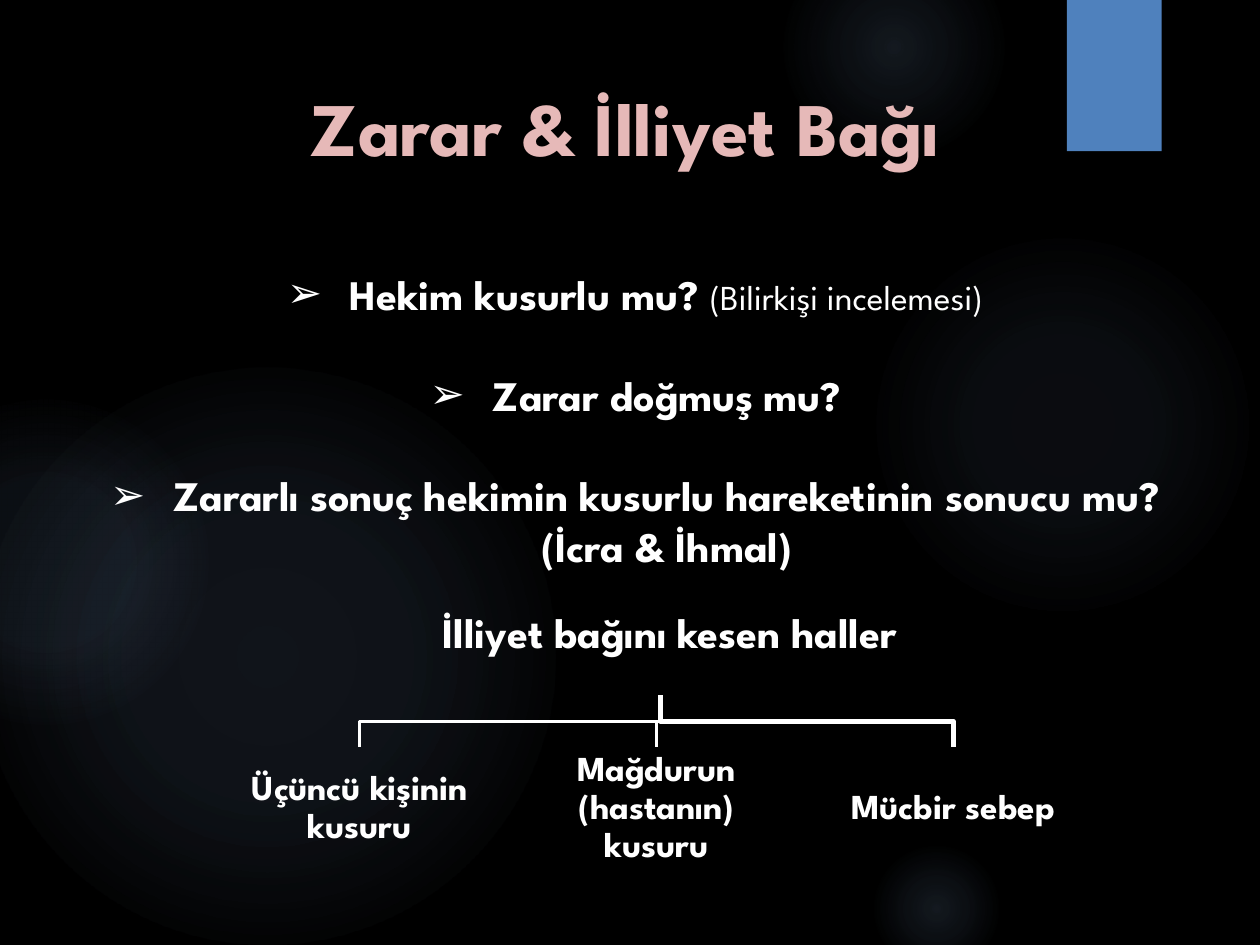
import dataclasses

import pptx
import pptx.dml.color
import pptx.enum.shapes
import pptx.enum.text
import pptx.oxml
import pptx.oxml.ns
import pptx.util
from lxml import etree

Cm = pptx.util.Cm
Pt = pptx.util.Pt
CENTER = pptx.enum.text.PP_ALIGN.CENTER
ANCHOR = pptx.enum.text.MSO_ANCHOR
SHAPE = pptx.enum.shapes.MSO_SHAPE


@dataclasses.dataclass(frozen=True)
class Theme:
    font: str = "League Spartan"
    background: str = "000000"
    text: str = "FFFFFF"
    title: str = "E6B9B8"
    ribbon: str = "4F81BD"
    glow: str = "8EB4E3"
    title_size: float = 43.2
    heading_size: float = 24
    detail_size: float = 20


THEME = Theme()

# left, top, diameter in cm; then (position, opacity) stops in percent
GLOWS = [
    (17.5, 4.65, 7.82, [(0, 7), (36, 6), (69, 0)]),
    (15.8, -1.27, 4.45, [(0, 14), (36, 7), (73, 0)]),
    (17.5, 16.94, 2.74, [(0, 14), (36, 7), (66, 0)]),
    (-0.43, 7.42, 11.63, [(0, 11), (36, 10), (75, 0)]),
    (-2.34, 8.05, 6.55, [(0, 8), (36, 8), (72, 0)]),
]

QUESTIONS = [
    [("Hekim kusurlu mu? ", THEME.heading_size, True),
     ("(Bilirkişi incelemesi)", THEME.detail_size, False)],
    [("Zarar doğmuş mu?", THEME.heading_size, True)],
    [("Zararlı sonuç hekimin kusurlu hareketinin sonucu mu? (İcra & İhmal)",
      THEME.heading_size, True)],
]

# text, connector width in points
CAUSES = [
    ("Üçüncü kişinin kusuru", 1.75),
    ("Mağdurun (hastanın) kusuru", 1.75),
    ("Mücbir sebep", 2.75),
]


def rgb(value):
    return pptx.dml.color.RGBColor.from_string(value)


def set_all(target, values):
    for attribute, value in values.items():
        setattr(target, attribute, value)


def place(shape, left, top, width, height):
    set_all(shape, {"left": Cm(left), "top": Cm(top),
                    "width": Cm(width), "height": Cm(height)})


def add_run(paragraph, text, size, color=THEME.text, bold=True):
    run = paragraph.add_run()
    run.text = text
    set_all(run.font, {"name": THEME.font, "size": Pt(size), "bold": bold})
    run.font.color.rgb = rgb(color)


def add_plain_shape(slide, kind, left, top, width, height):
    shape = slide.shapes.add_shape(kind, Cm(left), Cm(top), Cm(width), Cm(height))
    shape.shadow.inherit = False
    shape.line.fill.background()
    return shape


def add_glow(slide, left, top, diameter, stops):
    """Add a circle that fades out from its centre."""
    glow = add_plain_shape(slide, SHAPE.OVAL, left, top, diameter, diameter)
    glow.fill.background()
    stop_xml = "".join(
        f'<a:gs pos="{position * 1000}"><a:srgbClr val="{THEME.glow}">'
        f'<a:alpha val="{opacity * 1000}"/></a:srgbClr></a:gs>'
        for position, opacity in stops)
    gradient = pptx.oxml.parse_xml(
        f'<a:gradFill {pptx.oxml.ns.nsdecls("a")} rotWithShape="1">'
        f'<a:gsLst>{stop_xml}</a:gsLst><a:path path="circle">'
        '<a:fillToRect l="50000" t="50000" r="50000" b="50000"/></a:path></a:gradFill>')
    no_fill = glow.element.spPr.find(pptx.oxml.ns.qn("a:noFill"))
    no_fill.getparent().replace(no_fill, gradient)


def add_ribbon(slide):
    ribbon = add_plain_shape(slide, SHAPE.RECTANGLE, 21.51, 0, 1.91, 3.05)
    ribbon.fill.solid()
    ribbon.fill.fore_color.rgb = rgb(THEME.ribbon)


def bring_to_front(shape):
    shape.element.getparent().append(shape.element)


def fill_title(title):
    bring_to_front(title)
    place(title, 3.5, 1.5, 18.21, 4.24)
    set_all(title.text_frame, {"vertical_anchor": ANCHOR.TOP, "word_wrap": True,
                               "auto_size": pptx.enum.text.MSO_AUTO_SIZE.NONE})
    heading = title.text_frame.paragraphs[0]
    heading.alignment = CENTER
    add_run(heading, "Zarar & İlliyet Bağı", THEME.title_size, THEME.title)


def add_bullet(paragraph):
    properties = paragraph._p.get_or_add_pPr()
    set_indent = {"marL": Cm(1.27), "indent": -Cm(1.27)}
    for name, length in set_indent.items():
        properties.set(name, str(int(length)))
    for tag, key, value in (("a:buFont", "typeface", "Arial"),
                            ("a:buChar", "char", "➢")):
        etree.SubElement(properties, pptx.oxml.ns.qn(tag)).set(key, value)


def fill_questions(body):
    bring_to_front(body)
    place(body, 1.3, 5.28, 23.01, 8.81)
    frame = body.text_frame
    set_all(frame, {"vertical_anchor": ANCHOR.TOP, "word_wrap": True,
                    "auto_size": pptx.enum.text.MSO_AUTO_SIZE.NONE})
    for index, parts in enumerate(QUESTIONS):
        question = frame.add_paragraph() if index else frame.paragraphs[0]
        add_bullet(question)
        set_all(question, {"alignment": CENTER,
                           "space_before": Pt(28.8 if index else 0)})
        for text, size, bold in parts:
            add_run(question, text, size, bold=bold)


def add_label(group, text, size, left, top, width, height, left_inset=0.03):
    label = group.shapes.add_textbox(Cm(left), Cm(top), Cm(width), Cm(height))
    set_all(label.text_frame, {
        "word_wrap": True, "vertical_anchor": ANCHOR.MIDDLE,
        "margin_left": Cm(left_inset), "margin_right": Cm(0.03),
        "margin_top": Cm(0.03), "margin_bottom": Cm(0.03)})
    paragraph = label.text_frame.paragraphs[0]
    set_all(paragraph, {"alignment": CENTER, "line_spacing": 0.9})
    add_run(paragraph, text, size)


def add_branch(group, start_x, end_x, top, bottom, weight):
    middle = (top + bottom) / 2
    builder = group.shapes.build_freeform(Cm(start_x), Cm(top))
    builder.add_line_segments(
        [(Cm(start_x), Cm(middle)), (Cm(end_x), Cm(middle)), (Cm(end_x), Cm(bottom))],
        close=False)
    branch = builder.convert_to_shape()
    branch.shadow.inherit = False
    branch.fill.background()
    branch.line.color.rgb = rgb(THEME.text)
    branch.line.width = Pt(weight)


def add_cause_tree(slide):
    stem_x, stem_top, causes_top = 13.31, 14.02, 15.06
    first_left, step, width, height = 4.78, 5.98, 4.95, 2.46
    tree = slide.shapes.add_group_shape()
    lefts = [first_left + step * index for index in range(len(CAUSES))]
    for left, (_, weight) in reversed(list(zip(lefts, CAUSES))):
        add_branch(tree, stem_x, left + width / 2, stem_top, causes_top, weight)
    add_label(tree, "İlliyet bağını kesen haller", THEME.heading_size,
              7.92, stem_top - height, 10.77, height, left_inset=0.43)
    for left, (cause, _) in zip(lefts, CAUSES):
        add_label(tree, cause, THEME.detail_size, left, causes_top, width, height)


def main():
    deck = pptx.Presentation()
    set_all(deck, {"slide_width": Cm(25.4), "slide_height": Cm(19.05)})
    slide = deck.slides.add_slide(deck.slide_layouts[1])
    slide.background.fill.solid()
    slide.background.fill.fore_color.rgb = rgb(THEME.background)
    for glow in GLOWS:
        add_glow(slide, *glow)
    add_ribbon(slide)
    fill_title(slide.shapes.title)
    fill_questions(slide.placeholders[1])
    add_cause_tree(slide)
    deck.save("out.pptx")


if __name__ == "__main__":
    main()
